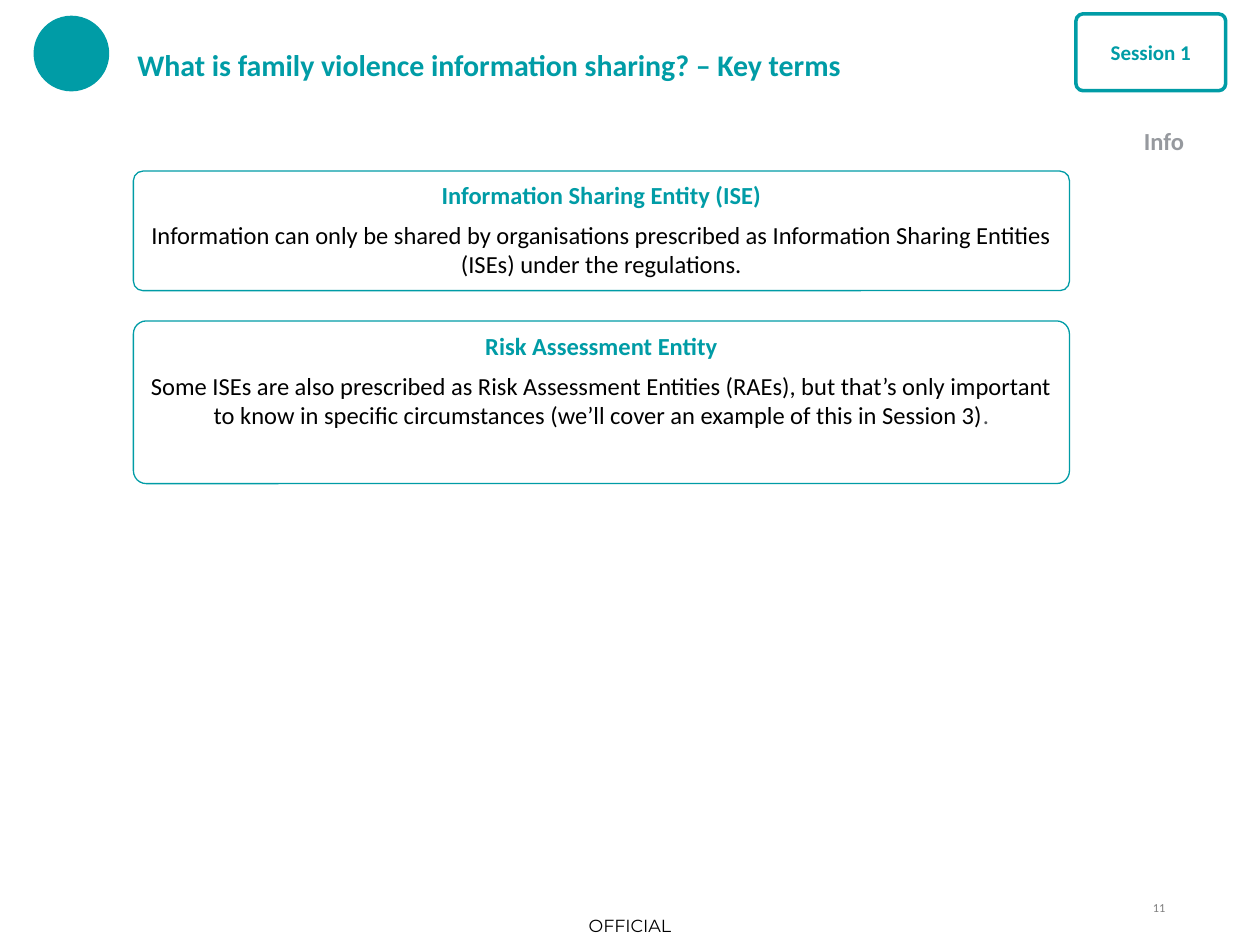
import pptx
import pptx.util
from pptx.dml.color import RGBColor
from pptx.enum.shapes import MSO_SHAPE
from pptx.enum.text import MSO_ANCHOR, PP_ALIGN
from pptx.util import Cm, Pt

THEME = {
    "teal": RGBColor(0x00, 0x9C, 0xA6),
    "white": RGBColor(0xFF, 0xFF, 0xFF),
    "black": RGBColor(0x00, 0x00, 0x00),
    "slate": RGBColor(0x53, 0x56, 0x5A),
    "grey": RGBColor(0x96, 0x99, 0x9E),
    "mid_grey": RGBColor(0x7F, 0x7F, 0x7F),
    "font": "Calibri",
    "footer_font": "Montserrat",
    "title": Pt(17.1),
    "body": Pt(14),
    "badge": Pt(12),
    "footer": Pt(10),
    "number": Pt(7),
}


def write(paragraph, runs, size, bold=False, align=PP_ALIGN.LEFT, after=0, font="font"):
    """Fill a paragraph with (text, theme colour) runs in one style."""
    paragraph.alignment = align
    paragraph.space_after = Pt(after)
    for text, colour in runs:
        run = paragraph.add_run()
        run.text = text
        style = {"name": THEME[font], "size": THEME[size], "bold": bold}
        for attribute, value in style.items():
            setattr(run.font, attribute, value)
        run.font.color.rgb = THEME[colour]


def add_outline(preset, box, fill, line_width, corner=None):
    """Add a teal-edged shape; a fill of None leaves it see-through."""
    outline = slide.shapes.add_shape(preset, *map(Cm, box))
    outline.shadow.inherit = False
    if fill:
        outline.fill.solid()
        outline.fill.fore_color.rgb = THEME[fill]
    else:
        outline.fill.background()
    outline.line.color.rgb = THEME["teal"]
    outline.line.width = Pt(line_width)
    if corner:
        outline.adjustments[0] = corner
    return outline


presentation = pptx.Presentation()
presentation.slide_width, presentation.slide_height = Cm(25.4), Cm(19.05)
slide = presentation.slides.add_slide(presentation.slide_layouts[6])

# Labels: box in cm, inset in cm (sides, top and bottom), anchor, text, style
labels = [
    ((11.4, 18.26, 2.6, 0.79), (0, 0), MSO_ANCHOR.MIDDLE, [("OFFICIAL", "black")],
     {"size": "footer", "align": PP_ALIGN.CENTER, "font": "footer_font"}),
    ((22.81, 2.41, 2.4, 0.86), (0.25, 0.13), MSO_ANCHOR.TOP, [("Info", "grey")],
     {"size": "body", "bold": True}),
    ((2.77, 0.48, 17.42, 1.65), (0, 0), MSO_ANCHOR.MIDDLE,
     [("What is family violence information sharing? – Key terms", "teal")],
     {"size": "title", "bold": True, "after": 3.4}),
    ((22.63, 18.14, 0.86, 0.5), (0, 0), MSO_ANCHOR.TOP, [("11", "mid_grey")],
     {"size": "number", "align": PP_ALIGN.RIGHT}),
]
for box, (side, edge), anchor, runs, style in labels:
    frame = slide.shapes.add_textbox(*map(Cm, box)).text_frame
    layout = {
        "word_wrap": True, "vertical_anchor": anchor,
        "margin_left": Cm(side), "margin_right": Cm(side),
        "margin_top": Cm(edge), "margin_bottom": Cm(edge),
    }
    for attribute, value in layout.items():
        setattr(frame, attribute, value)
    write(frame.paragraphs[0], runs, **style)

# Header marker and session badge
add_outline(MSO_SHAPE.OVAL, (0.69, 0.33, 1.5, 1.5), "teal", 0.75)
session = add_outline(
    MSO_SHAPE.ROUNDED_RECTANGLE, (21.69, 0.28, 3.02, 1.55), "white", 2, 0.094).text_frame
session.margin_left = session.margin_right = Cm(0.5)
session.vertical_anchor = MSO_ANCHOR.MIDDLE
write(session.paragraphs[0], [("Session 1", "teal")], "badge", True, PP_ALIGN.CENTER, 6)

# Key term cards, stacked with an equal gap
key_terms = [
    (2.41, "Information Sharing Entity (ISE)", [
        ("Information can only be shared by organisations prescribed as "
         "Information Sharing Entities (ISEs) under the regulations.", "black")]),
    (3.28, "Risk Assessment Entity", [
        ("Some ISEs are also prescribed as Risk Assessment Entities (RAEs), but that’s "
         "only important to know in specific circumstances (we’ll cover an example of "
         "this in Session 3)", "black"),
        (".", "slate")]),
]
card_top, card_gap = 3.45, 0.61
for height, term, meaning in key_terms:
    card = add_outline(MSO_SHAPE.ROUNDED_RECTANGLE, (2.69, card_top, 18.87, height),
                       None, 0.75, 0.079).text_frame
    card.word_wrap = True
    card.vertical_anchor = MSO_ANCHOR.TOP
    write(card.paragraphs[0], [(term, "teal")], "body", True, PP_ALIGN.CENTER, 6)
    write(card.add_paragraph(), meaning, "body", False, PP_ALIGN.CENTER, 6)
    card_top += height + card_gap

presentation.save("out.pptx")
